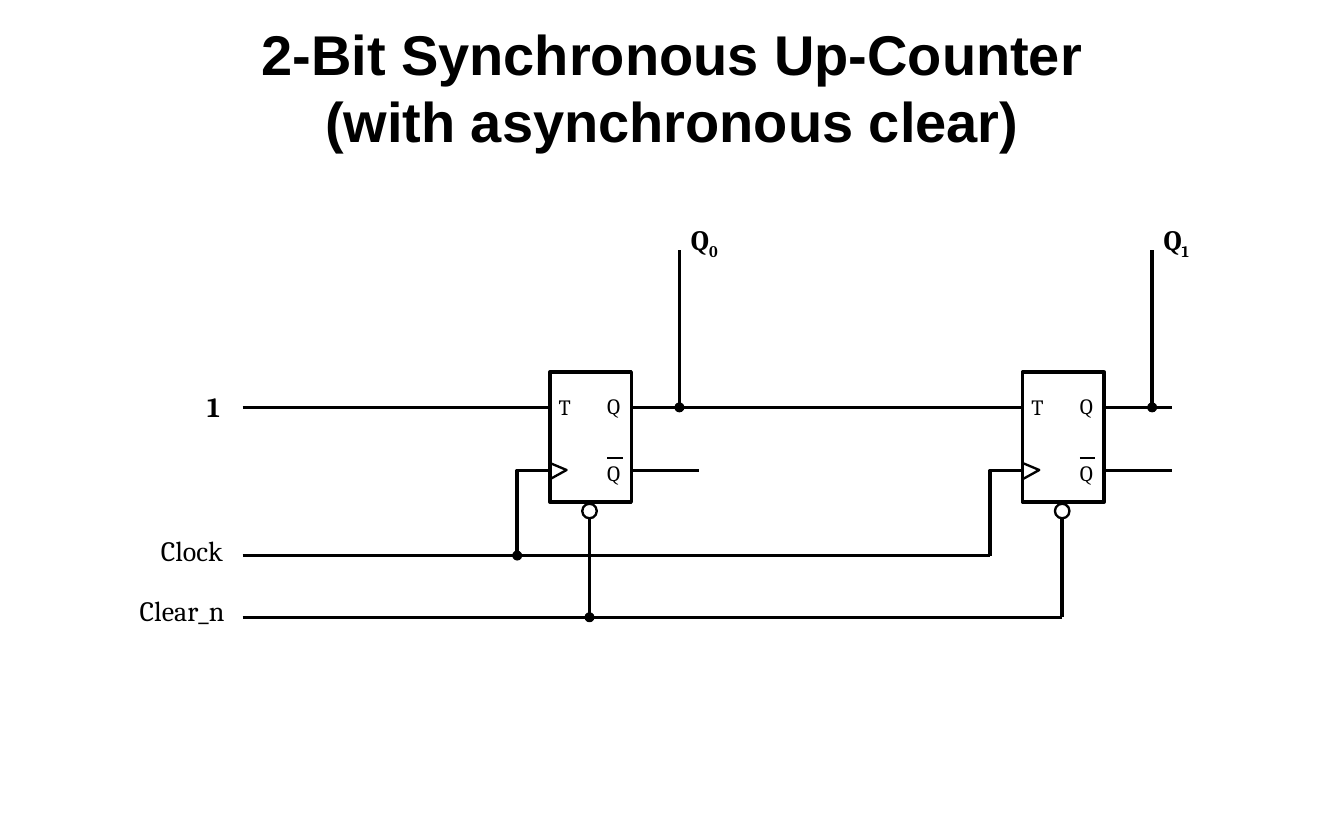
import pptx
import pptx.dml.color
import pptx.enum.shapes
import pptx.enum.text
import pptx.oxml.ns
import pptx.util
import lxml.etree

Cm = pptx.util.Cm
Pt = pptx.util.Pt
BLACK = pptx.dml.color.RGBColor(0x00, 0x00, 0x00)
WHITE = pptx.dml.color.RGBColor(0xFF, 0xFF, 0xFF)
SHAPES = pptx.enum.shapes.MSO_SHAPE

deck = pptx.Presentation()
deck.slide_width = Cm(30.48)
deck.slide_height = Cm(19.05)
page = deck.slides.add_slide(deck.slide_layouts[5])


def add_text(text, left, top, width, height, size=18, bold=False, subscript=""):
    box = page.shapes.add_textbox(Cm(left), Cm(top), Cm(width), Cm(height))
    frame = box.text_frame
    frame.word_wrap = False
    frame.margin_left = frame.margin_right = frame.margin_top = frame.margin_bottom = 0
    para = frame.paragraphs[0]
    for part in filter(None, (text, subscript)):
        span = para.add_run()
        span.text = part
        span.font.name = "Cambria"
        span.font.size = Pt(size)
        span.font.bold = bold
        span.font.color.rgb = BLACK
    if subscript:
        span.font._element.set("baseline", "-25000")


def add_wire(x1, y1, x2, y2, weight=2.25):
    wire = page.shapes.add_connector(
        pptx.enum.shapes.MSO_CONNECTOR.STRAIGHT, Cm(x1), Cm(y1), Cm(x2), Cm(y2))
    wire.line.color.rgb = BLACK
    wire.line.width = Pt(weight)
    lxml.etree.SubElement(wire._element.spPr, pptx.oxml.ns.qn("a:effectLst"))


title = page.shapes.title
title.left, title.top, title.width, title.height = Cm(2.54), Cm(0.15), Cm(25.4), Cm(3.63)
title.text_frame.text = "2-Bit Synchronous Up-Counter\n(with asynchronous clear)"
title.text_frame.auto_size = pptx.enum.text.MSO_AUTO_SIZE.NONE
title.text_frame.vertical_anchor = pptx.enum.text.MSO_ANCHOR.MIDDLE
for para in title.text_frame.paragraphs:
    para.alignment = pptx.enum.text.PP_ALIGN.CENTER
    para.font.name = "Arial"
    para.font.size = Pt(36)
    para.font.bold = True
    para.font.color.rgb = BLACK

input_left = 5.5
flop_lefts = [12.47, 23.19]
flop_top, flop_width, flop_height = 8.44, 1.85, 2.95
signal_y, inverse_y, clock_y, clear_y = 9.24, 10.67, 12.6, 14.0
bubble_size, dot_size = 0.33, 0.2

add_text("1", 4.7, 8.84, 0.46, 0.76, bold=True)
add_text("Clock", 3.65, 12.11, 1.52, 0.76)
add_text("Clear_n", 3.17, 13.46, 2.03, 0.76)

add_wire(input_left, signal_y, flop_lefts[0], signal_y)
add_wire(flop_lefts[0] + flop_width, signal_y, flop_lefts[1], signal_y)
add_wire(flop_lefts[1] + flop_width, signal_y, flop_lefts[1] + 3.4, signal_y)
add_wire(input_left, clock_y, flop_lefts[1] - 0.74, clock_y)
add_wire(input_left, clear_y, flop_lefts[1] + 0.9, clear_y)

ovals = []
for bit, left in enumerate(flop_lefts):
    right = left + flop_width
    tap_x, clear_x, clock_x = left + 2.94, left + 0.9, left - 0.74
    bubble_y = flop_top + flop_height + 0.2

    flop = page.shapes.add_shape(
        SHAPES.RECTANGLE, Cm(left), Cm(flop_top), Cm(flop_width), Cm(flop_height))
    flop.shadow.inherit = False
    flop.fill.solid()
    flop.fill.fore_color.rgb = WHITE
    flop.line.color.rgb = BLACK
    flop.line.width = Pt(2.25)

    for pin, pin_left, pin_top in [("T", 0.2, 0.48), ("Q", 1.3, 0.46), ("Q", 1.3, 1.98)]:
        add_text(pin, left + pin_left, flop_top + pin_top, 0.48, 0.61, size=14)
    add_wire(left + 1.3, flop_top + 1.95, left + 1.65, flop_top + 1.95, weight=1.38)

    clock_mark = [(left, 10.87), (left + 0.38, 10.66), (left, 10.5)]
    clock_feed = [(clock_x, clock_y), (clock_x, inverse_y), (left, inverse_y)]
    for points, weight in [(clock_mark, 1.5), (clock_feed, 2.25)]:
        corners = [(Cm(x), Cm(y)) for x, y in points]
        builder = page.shapes.build_freeform(*corners[0])
        builder.add_line_segments(corners[1:], close=False)
        outline = builder.convert_to_shape()
        outline.shadow.inherit = False
        outline.fill.background()
        outline.line.color.rgb = BLACK
        outline.line.width = Pt(weight)

    add_wire(right, inverse_y, left + 3.38, inverse_y)
    add_wire(tap_x, 5.68, tap_x, signal_y)
    add_wire(clear_x, bubble_y + bubble_size / 2, clear_x, clear_y)
    add_text("Q", left + 3.2, 5.04, 0.81, 0.76, bold=True, subscript=str(bit))

    ovals.append((clear_x, bubble_y, bubble_size, WHITE, 1.5))
    ovals.append((tap_x, signal_y, dot_size, BLACK, 0.75))

ovals.append((flop_lefts[0] - 0.74, clock_y, dot_size, BLACK, 0.75))
ovals.append((flop_lefts[0] + 0.9, clear_y, dot_size, BLACK, 0.75))
for x, y, size, color, weight in ovals:
    oval = page.shapes.add_shape(
        SHAPES.OVAL, Cm(x - size / 2), Cm(y - size / 2), Cm(size), Cm(size))
    oval.shadow.inherit = False
    oval.fill.solid()
    oval.fill.fore_color.rgb = color
    oval.line.color.rgb = BLACK
    oval.line.width = Pt(weight)

deck.save("out.pptx")
